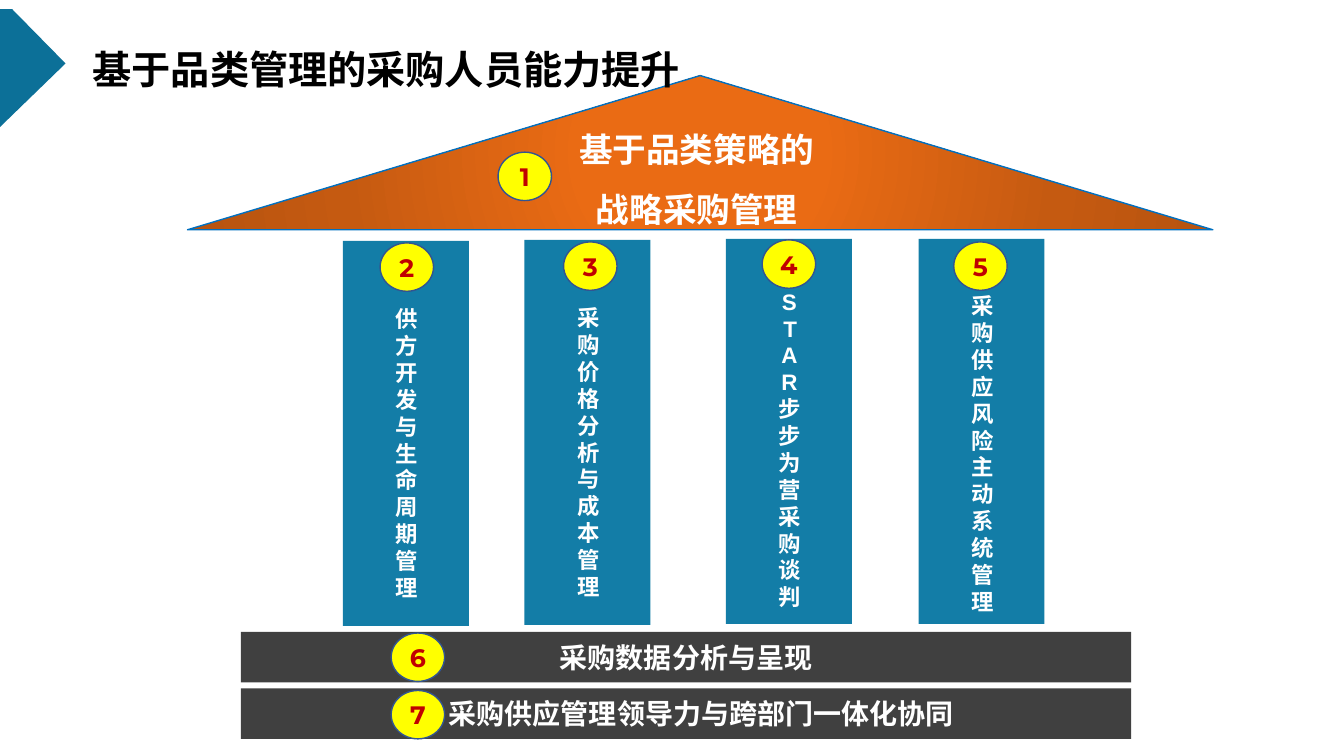
from pptx import Presentation
from pptx.dml.color import RGBColor
from pptx.enum.shapes import MSO_SHAPE as Preset
from pptx.enum.text import MSO_ANCHOR as Anchor, PP_ALIGN as Align
from pptx.oxml import parse_xml
from pptx.oxml.ns import nsdecls, qn
from pptx.util import Inches, Pt

WHITE = RGBColor(0xFF, 0xFF, 0xFF)
BLACK = RGBColor(0x00, 0x00, 0x00)
CORNER_BLUE = RGBColor(0x0C, 0x70, 0x98)
PILLAR_BLUE = RGBColor(0x13, 0x7D, 0xA7)
BASE_GREY = RGBColor(0x40, 0x40, 0x40)
ROOF_EDGE = RGBColor(0x00, 0x70, 0xC0)
BADGE_YELLOW = RGBColor(0xFF, 0xFF, 0x00)
BADGE_EDGE = RGBColor(0x32, 0x54, 0x91)
BADGE_RED = RGBColor(0xC0, 0x00, 0x00)
ROOF_STOPS = [(0, "EA6B14"), (23, "EA6B14"), (69, "C55A11"), (97, "B85410")]
CJK_FONT = "Noto Sans CJK SC"

deck = Presentation()
deck.slide_width, deck.slide_height = Inches(13.33), Inches(7.5)
page = deck.slides.add_slide(deck.slide_layouts[6])


def add_block(preset, at, fill=None, line=None):
    """Add a preset shape, or a text box when preset is None."""
    place = [Inches(value) for value in at]
    if preset is None:
        return page.shapes.add_textbox(*place)
    block = page.shapes.add_shape(preset, *place)
    block.shadow.inherit = False
    if fill is not None:
        block.fill.solid()
        block.fill.fore_color.rgb = fill
    if line is None:
        block.line.fill.background()
    else:
        block.line.color.rgb = line
        block.line.width = Pt(1)
    return block


def write(block, lines, size, color=WHITE, font="Arial", align=Align.CENTER,
          anchor=Anchor.MIDDLE, spacing=None):
    frame = block.text_frame
    frame.word_wrap = True
    frame.vertical_anchor = anchor
    for index, line in enumerate(lines):
        para = frame.add_paragraph() if index else frame.paragraphs[0]
        para.alignment = align
        para.line_spacing = spacing
        span = para.add_run()
        span.text = line
        for name, value in dict(name=font, size=Pt(size), bold=True).items():
            setattr(span.font, name, value)
        span.font.color.rgb = color
        latin = span.font._element.find(qn("a:latin"))
        latin.addnext(parse_xml(f'<a:ea {nsdecls("a")} typeface="{CJK_FONT}"/>'))


# Corner arrow
outline = [(0, 0.09), (0, 1.26), (0.65, 0.63), (0.12, 0.09)]
points = [(Inches(x), Inches(y)) for x, y in outline]
builder = page.shapes.build_freeform(*points[0], scale=1.0)
builder.add_line_segments(points[1:], close=True)
corner = builder.convert_to_shape()
corner.shadow.inherit = False
corner.fill.solid()
corner.fill.fore_color.rgb = CORNER_BLUE
corner.line.fill.background()

# Roof with a gradient spreading from its centre
roof = add_block(Preset.ISOSCELES_TRIANGLE, (1.86, 0.75, 10.17, 1.53), line=ROOF_EDGE)
roof.fill.gradient()
stops = "".join(f'<a:gs pos="{position * 1000}"><a:srgbClr val="{color}"/></a:gs>'
                for position, color in ROOF_STOPS)
linear = roof._element.spPr.find(qn("a:gradFill"))
linear.getparent().replace(linear, parse_xml(
    f'<a:gradFill {nsdecls("a")} rotWithShape="1"><a:gsLst>{stops}</a:gsLst>'
    '<a:path path="circle"><a:fillToRect l="50000" t="50000" r="50000" b="50000"/>'
    '</a:path></a:gradFill>'))
roof_text = add_block(None, (4, 1.03, 5.82, 1.24))
write(roof_text, ["基于品类策略的", "战略采购管理"], 24, font=CJK_FONT,
      anchor=Anchor.TOP, spacing=1.5)

# Pillars: left, top, label, label position
pillars = [
    (3.4, 2.39, "供方开发与生命周期管理", (3.76, 2.59, 0.55, 3.81)),
    (5.2, 2.38, "采购价格分析与成本管理", (5.56, 2.52, 0.55, 3.93)),
    (7.2, 2.37, "STAR步步为营采购谈判", (7.61, 2.44, 0.44, 4.03)),
    (9.11, 2.37, "采购供应风险主动系统管理", (9.47, 2.78, 0.55, 3.44)),
]
for left, top, label, label_at in pillars:
    add_block(Preset.RECTANGLE, (left, top, 1.25, 3.82), PILLAR_BLUE)
    write(add_block(None, label_at), [label], 16)

# Foundation: top, label, left inset
for top, label, inset in [(6.27, "采购数据分析与呈现", 0.1),
                          (6.83, "采购供应管理领导力与跨部门一体化协同", 0.4)]:
    base = add_block(Preset.RECTANGLE, (2.39, top, 8.83, 0.5), BASE_GREY)
    base.text_frame.margin_left = Inches(inset)
    write(base, [label], 20)

# Numbered badges
badges = [(4.94, 1.51), (3.77, 2.41), (5.59, 2.4), (7.56, 2.38), (9.46, 2.4),
          (3.88, 6.28), (3.88, 6.85)]
for number, (left, top) in enumerate(badges, start=1):
    badge = add_block(Preset.OVAL, (left, top, 0.53, 0.48), BADGE_YELLOW, BADGE_EDGE)
    for side in ("left", "top", "right", "bottom"):
        setattr(badge.text_frame, f"margin_{side}", 0)
    write(badge, [str(number)], 18, BADGE_RED, "Montserrat")

title = add_block(None, (0.82, 0.4, 8.24, 0.57))
write(title, ["基于品类管理的采购人员能力提升"], 28, BLACK, CJK_FONT, Align.LEFT, Anchor.TOP)

deck.save("out.pptx")
